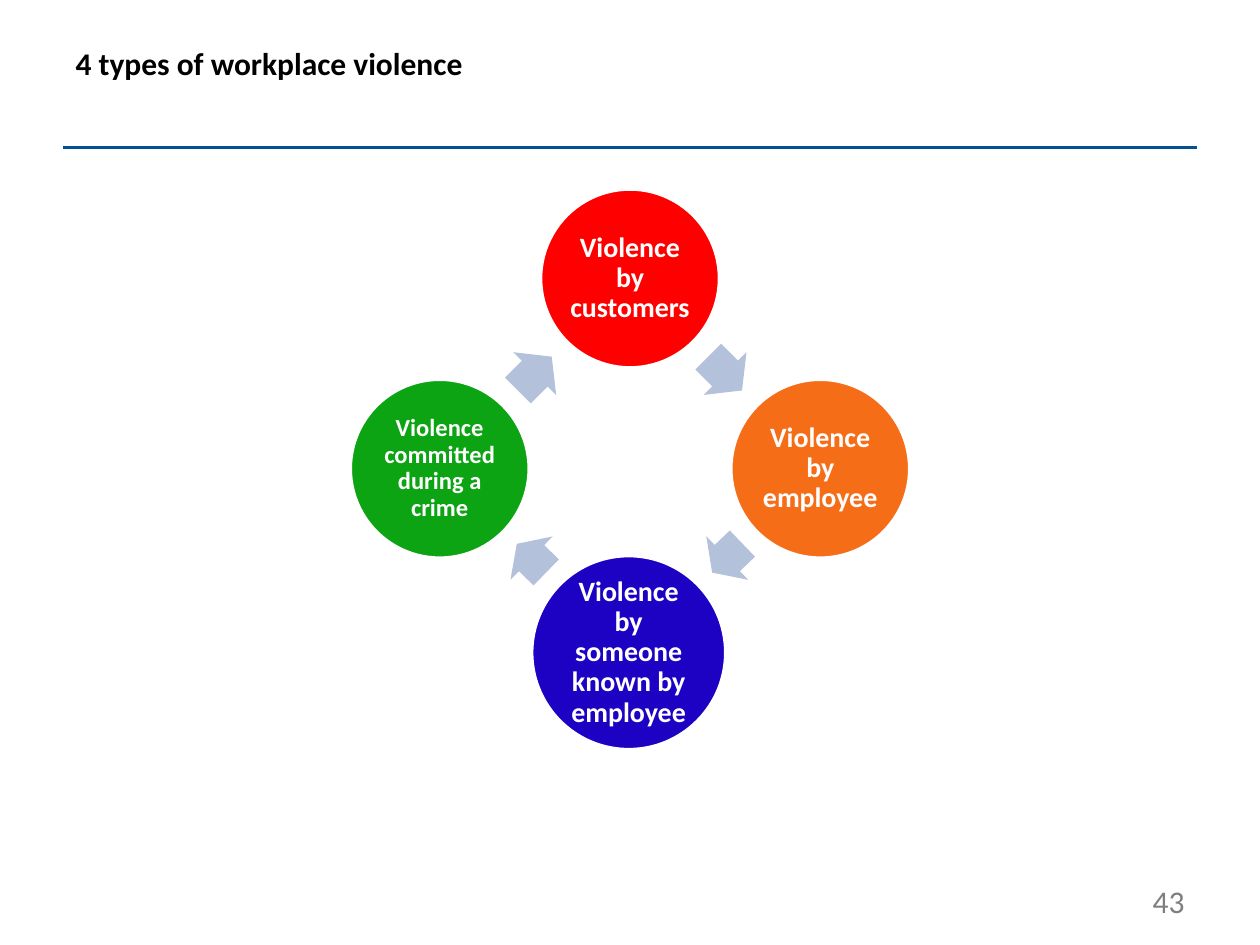
from math import atan2, cos, degrees, hypot, sin

from lxml import etree
from pptx import Presentation
from pptx.dml.color import RGBColor
from pptx.enum.shapes import MSO_CONNECTOR, MSO_SHAPE
from pptx.enum.text import MSO_ANCHOR, PP_ALIGN
from pptx.oxml.ns import qn
from pptx.util import Inches, Pt

OVAL = MSO_SHAPE.OVAL
ARROW = MSO_SHAPE.RIGHT_ARROW
STRAIGHT = MSO_CONNECTOR.STRAIGHT
TOP, MIDDLE = MSO_ANCHOR.TOP, MSO_ANCHOR.MIDDLE
LEFT, CENTER, RIGHT = PP_ALIGN.LEFT, PP_ALIGN.CENTER, PP_ALIGN.RIGHT

BLACK = RGBColor(0x00, 0x00, 0x00)
WHITE = RGBColor(0xFF, 0xFF, 0xFF)
GRAY = RGBColor(0x7F, 0x7F, 0x7F)
RULE_BLUE = RGBColor(0x00, 0x52, 0x94)
PALE_BLUE = RGBColor(0xB3, 0xC1, 0xDB)
RED = RGBColor(0xFF, 0x00, 0x00)
ORANGE = RGBColor(0xF6, 0x6D, 0x18)
INDIGO = RGBColor(0x1E, 0x02, 0xC4)
GREEN = RGBColor(0x0C, 0xA4, 0x13)

COLUMNS, ROWS = 100, 75
ARROW_SHARE = 0.53
ARROW_HEIGHT = 4.8

VIOLENCE_TYPES = [
    ("Violence by customers", 50, 22.1, 7.1, RED, 16),
    ("Violence by employee", 65.1, 37.2, 7.1, ORANGE, 16),
    ("Violence by someone known by employee", 49.9, 51.8, 7.7, INDIGO, 16),
    ("Violence committed during a crime", 34.9, 37.2, 7.1, GREEN, 14),
]


def assign(target, values):
    for name, value in values.items():
        setattr(target, name, value)


class SlideBuilder:
    font_name = "Calibri"

    def __init__(self, deck):
        self.page = deck.slides.add_slide(deck.slide_layouts[5])
        self.column = deck.slide_width / COLUMNS
        self.row = deck.slide_height / ROWS

    def area(self, left, top, width, height):
        return (round(left * self.column), round(top * self.row),
                round(width * self.column), round(height * self.row))

    def fill_text(self, box, text, size, color, bold=False, align=LEFT,
                  anchor=TOP, inset=None, spacing=None):
        frame = box.text_frame
        assign(frame, {"text": text, "word_wrap": True, "vertical_anchor": anchor})
        if inset is not None:
            sides = ("left", "top", "right", "bottom")
            assign(frame, {f"margin_{side}": inset for side in sides})
        para = frame.paragraphs[0]
        assign(para, {"alignment": align, "line_spacing": spacing})
        span = para.runs[0]
        assign(span.font, {"name": self.font_name, "size": Pt(size), "bold": bold})
        span.font.color.rgb = color

    def title(self, text, *area):
        box = self.page.shapes.title
        places = ("left", "top", "width", "height")
        assign(box, dict(zip(places, self.area(*area))))
        self.fill_text(box, text, 18, BLACK, bold=True)

    def label(self, text, *area):
        box = self.page.shapes.add_textbox(*self.area(*area))
        self.fill_text(box, text, 18, GRAY, align=RIGHT, anchor=MIDDLE)

    def rule(self, left, right, level):
        x, y, width, _ = self.area(left, level, right - left, 0)
        line = self.page.shapes.add_connector(STRAIGHT, x, y, x + width, y)
        line.line.color.rgb = RULE_BLUE
        line.line.width = Pt(2)
        etree.SubElement(line._element.spPr, qn("a:effectLst"))

    def shape(self, kind, x, y, width, height, fill):
        box = self.page.shapes.add_shape(
            kind, *self.area(x - width / 2, y - height / 2, width, height))
        box.shadow.inherit = False
        box.fill.solid()
        box.fill.fore_color.rgb = fill
        return box

    def circle(self, text, x, y, radius, fill, size):
        box = self.shape(OVAL, x, y, 2 * radius, 2 * radius, fill)
        box.line.color.rgb = WHITE
        box.line.width = Pt(2)
        self.fill_text(box, text, size, WHITE, bold=True, align=CENTER,
                       anchor=MIDDLE, inset=Inches(0.02), spacing=0.9)

    def arrow(self, start, end):
        _, x1, y1, radius1, *_ = start
        _, x2, y2, radius2, *_ = end
        angle = atan2(y2 - y1, x2 - x1)
        gap = hypot(x2 - x1, y2 - y1) - radius1 - radius2
        reach = radius1 + gap / 2
        box = self.shape(ARROW, x1 + reach * cos(angle), y1 + reach * sin(angle),
                         gap * ARROW_SHARE, ARROW_HEIGHT, PALE_BLUE)
        box.line.fill.background()
        box.rotation = degrees(angle) % 360
        box.adjustments[0] = 0.6
        box.adjustments[1] = 0.5


def main():
    deck = Presentation()
    deck.slide_width, deck.slide_height = Inches(10), Inches(7.5)
    slide = SlideBuilder(deck)
    slide.rule(5, 95, 11.7)
    slide.title("4 types of workplace violence", 5, 3, 90, 8.7)
    slide.label("43", 71.7, 69.5, 23.3, 4)
    following = VIOLENCE_TYPES[1:] + VIOLENCE_TYPES[:1]
    for current, successor in zip(VIOLENCE_TYPES, following):
        slide.circle(*current)
        slide.arrow(current, successor)
    deck.save("out.pptx")


if __name__ == "__main__":
    main()
